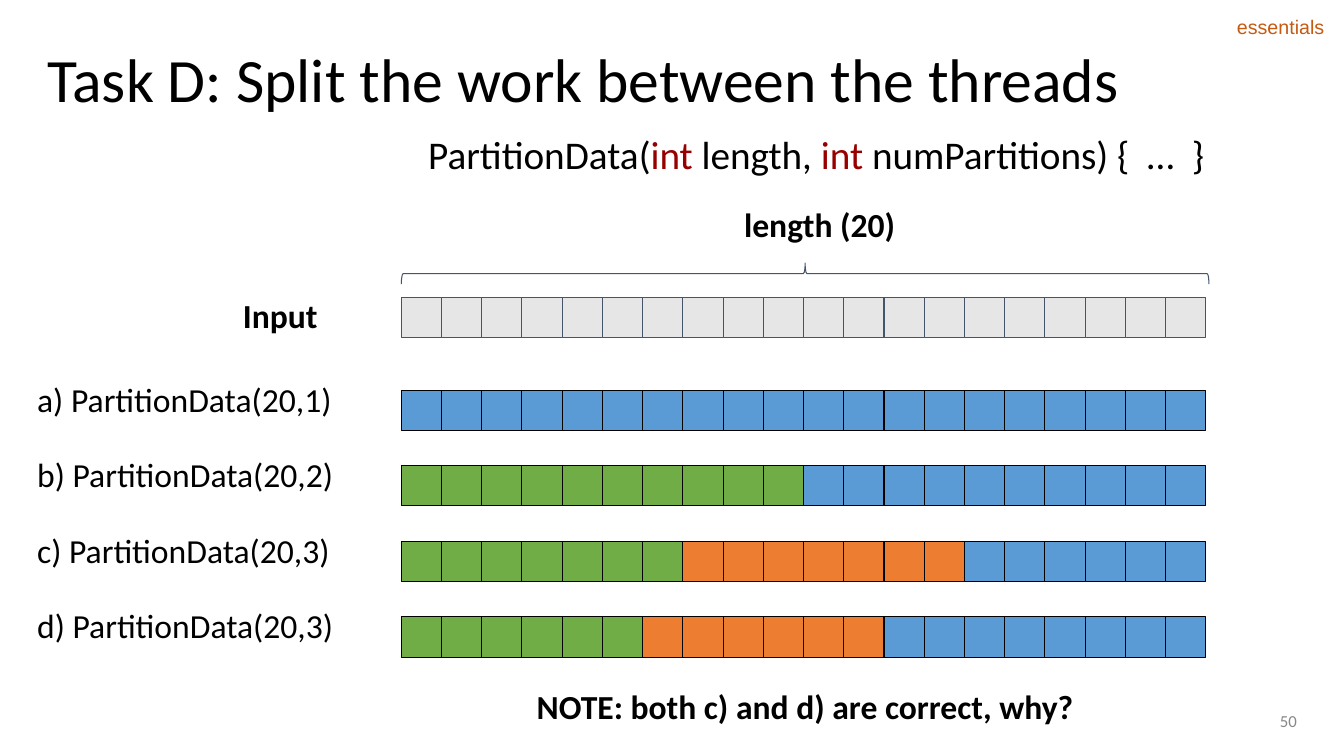
from pptx import Presentation
from pptx.dml.color import RGBColor
from pptx.enum.shapes import MSO_SHAPE
from pptx.enum.text import MSO_ANCHOR, MSO_AUTO_SIZE, PP_ALIGN
from pptx.util import Inches, Pt

RECTANGLE, BRACE = MSO_SHAPE.RECTANGLE, MSO_SHAPE.LEFT_BRACE
TOP, MIDDLE = MSO_ANCHOR.TOP, MSO_ANCHOR.MIDDLE
LEFT, CENTER, RIGHT = PP_ALIGN.LEFT, PP_ALIGN.CENTER, PP_ALIGN.RIGHT
GROW = MSO_AUTO_SIZE.SHAPE_TO_FIT_TEXT

BLACK = RGBColor(0x00, 0x00, 0x00)
KEYWORD_RED = RGBColor(0x98, 0x00, 0x00)
TAG_ORANGE = RGBColor(0xC6, 0x5A, 0x11)
NUMBER_GRAY = RGBColor(0x88, 0x88, 0x88)
SLATE = RGBColor(0x44, 0x54, 0x6A)
LIGHT_GRAY = RGBColor(0xE7, 0xE6, 0xE6)
BLUE = RGBColor(0x5B, 0x9B, 0xD5)
GREEN = RGBColor(0x70, 0xAD, 0x47)
ORANGE = RGBColor(0xED, 0x7D, 0x31)

LENGTH = 20
ARRAY_LEFT, ARRAY_WIDTH = 3.98, 7.98
CELL_SIZE = 0.4
INPUT_TOP = 2.95
FIRST_ROW_TOP, ROW_PITCH = 3.87, 0.75
LABEL_RISE = 0.17

# Each partitioning: label, then (cell count, color) per partition
PARTITIONINGS = [
    ("a) PartitionData(20,1)", [(20, BLUE)]),
    ("b) PartitionData(20,2)", [(10, GREEN), (10, BLUE)]),
    ("c) PartitionData(20,3)", [(7, GREEN), (7, ORANGE), (6, BLUE)]),
    ("d) PartitionData(20,3)", [(6, GREEN), (6, ORANGE), (8, BLUE)]),
]


def add_text(slide, box, runs, size, align=LEFT, anchor=TOP, bold=False,
             font="Calibri", inset_left=0.1, inset_y=0.1, spacing=None,
             before=0, wrap=True):
    """Add a one-paragraph text box; runs holds (text, color) pairs."""
    text_box = slide.shapes.add_textbox(*map(Inches, box))
    frame = text_box.text_frame
    frame.word_wrap = wrap
    if not wrap:
        frame.auto_size = GROW
    frame.vertical_anchor = anchor
    frame.margin_left, frame.margin_right = Inches(inset_left), Inches(0.1)
    frame.margin_top = frame.margin_bottom = Inches(inset_y)
    paragraph = frame.paragraphs[0]
    paragraph.alignment = align
    paragraph.space_before = Pt(before)
    if spacing:
        paragraph.line_spacing = spacing
    for text, color in runs:
        run = paragraph.add_run()
        run.text = text
        run.font.name = font
        run.font.size = Pt(size)
        run.font.bold = bold
        run.font.color.rgb = color


def add_outlined_shape(slide, preset, box, line_color):
    shape = slide.shapes.add_shape(preset, *map(Inches, box))
    shape.shadow.inherit = False
    shape.line.color.rgb = line_color
    shape.line.width = Pt(0.75)
    return shape


def add_array(slide, top, partitions, line_color):
    """Draw a row of cells, colored partition by partition."""
    cell_colors = [color for count, color in partitions for _ in range(count)]
    for index, color in enumerate(cell_colors):
        left = ARRAY_LEFT + index * ARRAY_WIDTH / LENGTH
        cell = add_outlined_shape(
            slide, RECTANGLE, (left, top, CELL_SIZE, CELL_SIZE), line_color)
        cell.fill.solid()
        cell.fill.fore_color.rgb = color


def add_length_brace(slide):
    brace = add_outlined_shape(slide, BRACE, (7.88, -1.29, 0.21, 8.01), SLATE)
    brace.fill.background()
    brace.rotation = 90
    brace.adjustments[0] = 0.083
    brace.adjustments[1] = 0.5


def add_partitionings(slide):
    for row, (label, partitions) in enumerate(PARTITIONINGS):
        top = FIRST_ROW_TOP + row * ROW_PITCH
        add_text(slide, (0.27, top - LABEL_RISE, 3.35, 0.91),
                 [(label, BLACK)], 24, spacing=0.9, before=5)
        add_array(slide, top, partitions, BLACK)


def main():
    prs = Presentation()
    prs.slide_width, prs.slide_height = Inches(13.33), Inches(7.5)
    slide = prs.slides.add_slide(prs.slide_layouts[6])

    add_text(slide, (0.37, 0.2, 12.59, 1.24),
             [("Task D: Split the work between the threads", BLACK)], 44,
             anchor=MIDDLE, spacing=0.9)
    add_text(slide, (9.42, 6.95, 3.54, 0.4), [("50", NUMBER_GRAY)], 12,
             align=RIGHT, anchor=MIDDLE, inset_y=0.05)
    signature = [("PartitionData(", BLACK), ("int", KEYWORD_RED),
                 (" length, ", BLACK), ("int", KEYWORD_RED),
                 (" numPartitions) {  …  }", BLACK)]
    add_text(slide, (2.83, 1.25, 10.03, 0.96), signature, 28, align=CENTER,
             inset_left=0.6, spacing=0.9, before=5)

    add_array(slide, INPUT_TOP, [(LENGTH, LIGHT_GRAY)], SLATE)
    add_text(slide, (2.31, 2.83, 1.05, 0.64), [("Input", BLACK)], 24, bold=True)
    add_length_brace(slide)
    add_text(slide, (7.17, 1.92, 1.92, 0.64), [("length (20)", BLACK)], 24,
             align=CENTER, bold=True)

    add_partitionings(slide)
    add_text(slide, (3.98, 6.7, 8.01, 0.64),
             [("NOTE: both c) and d) are correct, why?", BLACK)], 24,
             align=CENTER, bold=True)
    add_text(slide, (12.17, 0.1, 1.07, 0.34), [("essentials", TAG_ORANGE)], 14,
             font="Arial", inset_y=0.05, wrap=False)

    prs.save("out.pptx")


if __name__ == "__main__":
    main()
